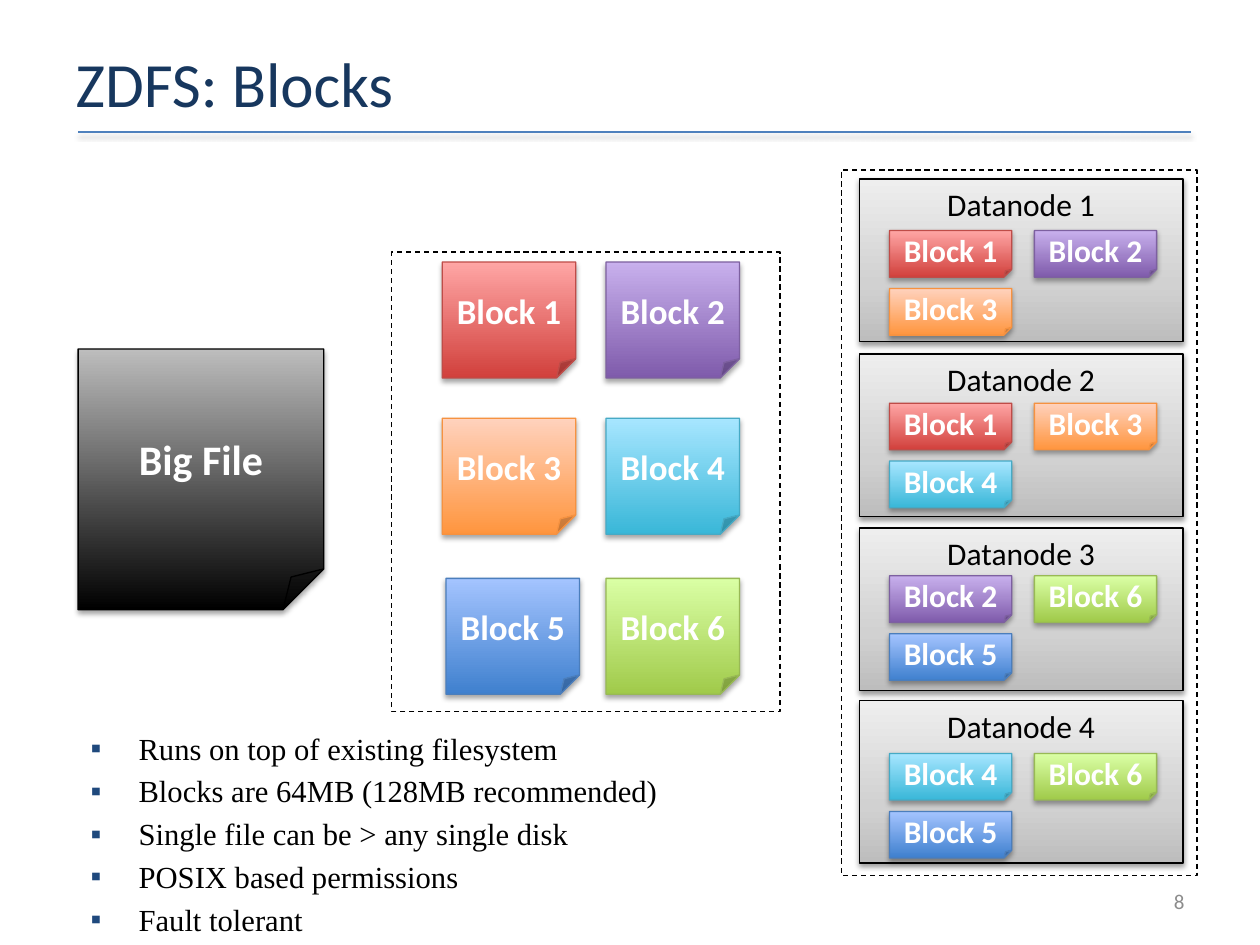
import pptx
import pptx.dml.color
import pptx.enum.dml
import pptx.enum.shapes
import pptx.enum.text
import pptx.oxml
import pptx.oxml.ns
import pptx.util
from pptx.util import Inches

SHAPE = pptx.enum.shapes.MSO_SHAPE
ALIGN = pptx.enum.text.PP_ALIGN
ANCHOR = pptx.enum.text.MSO_ANCHOR

COLORS = {
    "title": "17375E", "rule": "4F81BD", "bullet": "1F497D",
    "number": "8C8C8C", "black": "000000", "white": "FFFFFF",
}
# Gradient stops run from the bottom edge (0) to the top edge (100)
FILE_STOPS = {0: "000000", 100: "BDBDBD"}
NODE_STOPS = {0: "BDBDBD", 35: "D1D1D1", 100: "EEEEEE"}
# Block number: bottom colour, top colour, outline
BLOCKS = {
    1: ("D1403C", "FFA6A5", "BF4C48"),
    2: ("7F5BAB", "C8B0ED", "7D60A0"),
    3: ("FF953E", "FFD2BD", "F69240"),
    4: ("39B7D8", "A7E6FF", "46AAC5"),
    5: ("3F80CE", "A4C4FF", "4B7EBC"),
    6: ("A0CA4A", "DAFFA5", "98B955"),
}
# Datanode: top, top of its first block row, stored blocks
DATANODES = {
    1: (1.42, 1.83, (1, 2, 3)),
    2: (2.81, 3.2, (1, 3, 4)),
    3: (4.19, 4.57, (2, 6, 5)),
    4: (5.56, 5.98, (4, 6, 5)),
}
FEATURES = [
    "Runs on top of existing filesystem",
    "Blocks are 64MB (128MB recommended)",
    "Single file can be > any single disk",
    "POSIX based permissions",
    "Fault tolerant",
]


def rgb(value):
    return pptx.dml.color.RGBColor.from_string(value)


def parse(xml):
    """Read an XML fragment that uses the a: prefix."""
    tag, rest = xml.split(">", 1)
    slash = "/" if tag.endswith("/") else ""
    return pptx.oxml.parse_xml(
        f"{tag.rstrip('/')} {pptx.oxml.ns.nsdecls('a')}{slash}>{rest}")


def write(paragraph, text, size, color, font="Calibri", bold=False, align=ALIGN.LEFT):
    paragraph.alignment = align
    run = paragraph.add_run()
    run.text = text
    run.font.name = font
    run.font.size = pptx.util.Pt(size)
    run.font.bold = bold
    run.font.color.rgb = rgb(color)


def add_shadow(shape, alpha, distance):
    """Drop a soft shadow straight down; call after the line is set."""
    shape.element.spPr.append(parse(
        f'<a:effectLst><a:outerShdw blurRad="{pptx.util.Pt(3.1)}" '
        f'dist="{pptx.util.Pt(distance)}" dir="5400000" rotWithShape="0">'
        f'<a:srgbClr val="000000"><a:alpha val="{alpha * 1000}"/></a:srgbClr>'
        "</a:outerShdw></a:effectLst>"))


class SlideBuilder:
    line_width = pptx.util.Pt(0.75)

    def __init__(self, slide):
        self.slide = slide

    def place(self, shape, box):
        shape.left, shape.top, shape.width, shape.height = map(Inches, box)

    def title(self, text, box):
        heading = self.slide.shapes.title
        self.place(heading, box)
        heading.text_frame.vertical_anchor = ANCHOR.MIDDLE
        write(heading.text_frame.paragraphs[0], text, 36, COLORS["title"])

    def bullets(self, items, box):
        body = self.slide.placeholders[1]
        self.place(body, box)
        frame = body.text_frame
        frame.auto_size = pptx.enum.text.MSO_AUTO_SIZE.NONE
        for index, item in enumerate(items):
            paragraph = frame.add_paragraph() if index else frame.paragraphs[0]
            write(paragraph, item, 17.5, COLORS["black"], font="Times New Roman")
            paragraph.space_before = pptx.util.Pt(3.5)
            properties = paragraph._p.get_or_add_pPr()
            properties.set("marL", str(Inches(0.38)))
            properties.set("indent", str(-Inches(0.38)))
            properties.append(parse(
                f'<a:buClr><a:srgbClr val="{COLORS["bullet"]}"/></a:buClr>'))
            properties.append(parse('<a:buChar char="▪"/>'))

    def rule(self, left, right, top):
        line = self.slide.shapes.add_connector(
            pptx.enum.shapes.MSO_CONNECTOR.STRAIGHT,
            Inches(left), Inches(top), Inches(right), Inches(top))
        line.line.color.rgb = rgb(COLORS["rule"])
        line.line.width = pptx.util.Pt(1)
        add_shadow(line, 38, 1.6)

    def outline(self, kind, box, color):
        shape = self.slide.shapes.add_shape(kind, *map(Inches, box))
        shape.line.color.rgb = rgb(color)
        shape.line.width = self.line_width
        return shape

    def frame(self, box):
        shape = self.outline(SHAPE.RECTANGLE, box, COLORS["black"])
        shape.fill.background()
        shape.line.dash_style = pptx.enum.dml.MSO_LINE.DASH
        shape.shadow.inherit = False

    def panel(self, kind, text, box, stops, line, anchor, shadow, **text_format):
        shape = self.outline(kind, box, line)
        shape.fill.gradient()
        shape.fill.gradient_angle = 90
        stop_list = shape.element.spPr.find(".//" + pptx.oxml.ns.qn("a:gsLst"))
        stop_list.clear()
        for position, color in stops.items():
            stop_list.append(parse(
                f'<a:gs pos="{position * 1000}"><a:srgbClr val="{color}"/></a:gs>'))
        add_shadow(shape, *shadow)
        frame = shape.text_frame
        frame.margin_left = frame.margin_right = 0
        frame.vertical_anchor = anchor
        write(frame.paragraphs[0], text, align=ALIGN.CENTER, **text_format)

    def sheet(self, text, box, stops, line, size):
        self.panel(SHAPE.FOLDED_CORNER, text, box, stops, line, ANCHOR.MIDDLE,
                   (35, 1.8), size=size, color=COLORS["white"], bold=True)

    def block(self, number, box, size):
        bottom, top, line = BLOCKS[number]
        self.sheet(f"Block {number}", box, {0: bottom, 100: top}, line, size)

    def datanode(self, number, top, blocks_top, blocks):
        self.panel(SHAPE.RECTANGLE, f"Datanode {number}", (6.82, top, 2.57, 1.29),
                   NODE_STOPS, COLORS["black"], ANCHOR.TOP, (38, 1.6),
                   size=18, color=COLORS["black"])
        for index, block in enumerate(blocks):
            row, column = divmod(index, 2)
            self.block(block, (7.06 + 1.15 * column, blocks_top + 0.46 * row,
                               0.97, 0.37), 18)

    def page_number(self, text, box):
        number = self.slide.shapes.add_textbox(*map(Inches, box))
        number.text_frame.word_wrap = True
        number.text_frame.vertical_anchor = ANCHOR.MIDDLE
        write(number.text_frame.paragraphs[0], text, 12, COLORS["number"],
              align=ALIGN.RIGHT)


def main():
    deck = pptx.Presentation()
    deck.slide_width, deck.slide_height = Inches(10), Inches(7.5)
    page = SlideBuilder(deck.slides.add_slide(deck.slide_layouts[1]))

    # Heading
    page.title("ZDFS: Blocks", (0.5, 0.3, 9, 0.71))
    page.rule(0.62, 9.45, 1.05)

    # The file and the blocks it is split into
    page.sheet("Big File", (0.62, 2.77, 1.95, 2.07), FILE_STOPS, COLORS["black"], 24)
    page.frame((3.11, 2, 3.08, 3.65))
    for number in BLOCKS:
        row, column = divmod(number - 1, 2)
        left = 3.54 if number == 5 else 3.51 + 1.3 * column
        page.block(number, (left, (2.08, 3.32, 4.59)[row], 1.06, 0.92), 20)

    # Datanodes with replicated blocks
    page.frame((6.68, 1.35, 2.82, 5.6))
    for number, details in DATANODES.items():
        page.datanode(number, *details)

    # Features and page number
    page.bullets(FEATURES, (0.62, 5.74, 5.57, 1.61))
    page.page_number("8", (7.17, 6.95, 2.33, 0.4))

    deck.save("out.pptx")


if __name__ == "__main__":
    main()
